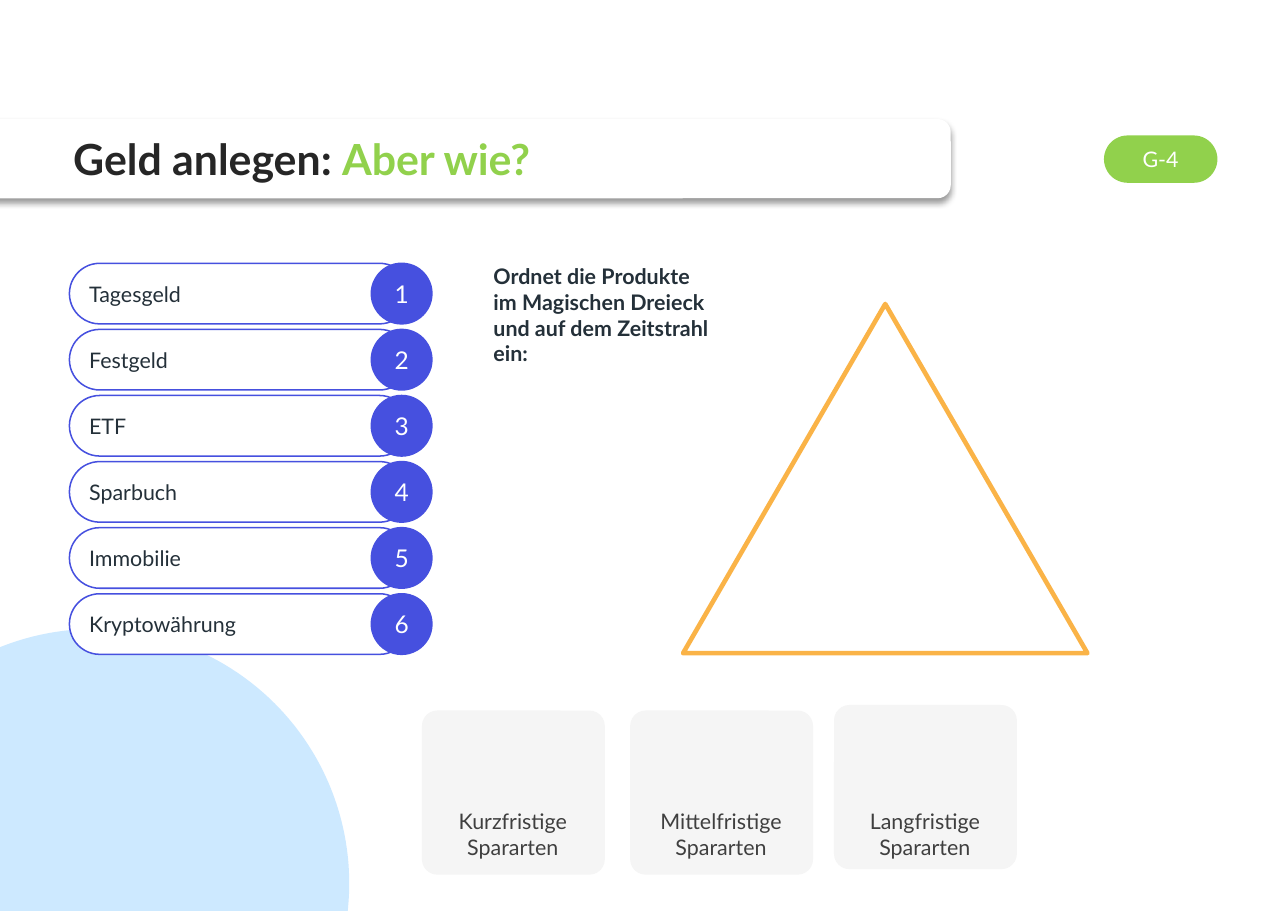
import math

import lxml.etree
import pptx
import pptx.dml.color
import pptx.enum.shapes
import pptx.enum.text
import pptx.oxml.ns
import pptx.util

Inches = pptx.util.Inches
SHAPES = pptx.enum.shapes.MSO_SHAPE
ANCHOR = pptx.enum.text.MSO_ANCHOR
ALIGN = pptx.enum.text.PP_ALIGN

COLORS = {
    "sky": "CDE9FF", "white": "FFFFFF", "title": "262626", "green": "91D14C",
    "orange": "FAB347", "blue": "4650DF", "ink": "243039",
    "card": "F5F5F5", "label": "3F3F3F", "shadow": "000000",
}

presentation = pptx.Presentation()
presentation.slide_width = Inches(11.69)
presentation.slide_height = Inches(8.27)
slide = presentation.slides.add_slide(presentation.slide_layouts[6])


def add_shape(kind, left, top, width, height, fill, line=None, points=1, corner=None):
    shape = slide.shapes.add_shape(
        kind, Inches(left), Inches(top), Inches(width), Inches(height))
    shape.shadow.inherit = False
    shape.fill.solid()
    shape.fill.fore_color.rgb = pptx.dml.color.RGBColor.from_string(COLORS[fill])
    if line:
        shape.line.color.rgb = pptx.dml.color.RGBColor.from_string(COLORS[line])
        shape.line.width = pptx.util.Pt(points)
    else:
        shape.line.fill.background()
    if corner is not None:
        shape.adjustments[0] = corner
    return shape


def write(shape, runs, size, align=ALIGN.LEFT, bold=False, anchor=ANCHOR.MIDDLE):
    frame = shape.text_frame
    frame.word_wrap = True
    frame.vertical_anchor = anchor
    paragraph = frame.paragraphs[0]
    paragraph.alignment = align
    for text, color in runs:
        run = paragraph.add_run()
        run.text = text
        run.font.name = "Lato"
        run.font.size = pptx.util.Pt(size)
        run.font.bold = bold
        run.font.color.rgb = pptx.dml.color.RGBColor.from_string(COLORS[color])


# Corner disc, cut off by the slide edges
center_x, center_y, radius = 0.86, 8.02, 2.31
start = math.acos(-center_x / radius)
end = -math.asin((8.27 - center_y) / radius)
steps = 120
angles = [start + (end - start) * step / steps for step in range(steps + 1)]
arc = [(Inches(center_x + radius * math.cos(angle)),
        Inches(center_y - radius * math.sin(angle))) for angle in angles]
builder = slide.shapes.build_freeform(0, Inches(8.27))
builder.add_line_segments(arc, close=True)
disc = builder.convert_to_shape()
disc.shadow.inherit = False
disc.fill.solid()
disc.fill.fore_color.rgb = pptx.dml.color.RGBColor.from_string(COLORS["sky"])
disc.line.fill.background()

# Title bar with a soft shadow below
title = add_shape(SHAPES.ROUNDED_RECTANGLE, -0.83, 1.08, 9.46, 0.72, "white", corner=0.167)
title.text_frame.margin_left = Inches(1.46)
write(title, [("Geld anlegen: ", "title"), ("Aber wie?", "green")], 28, bold=True)
qn = pptx.oxml.ns.qn
effects = title.element.spPr.find(qn("a:effectLst"))
shadow = lxml.etree.SubElement(
    effects, qn("a:outerShdw"), blurRad=str(pptx.util.Pt(4)),
    dist=str(pptx.util.Pt(3)), dir="5400000", algn="t", rotWithShape="0")
shadow_color = lxml.etree.SubElement(shadow, qn("a:srgbClr"), val=COLORS["shadow"])
lxml.etree.SubElement(shadow_color, qn("a:alpha"), val="40000")

# Page tag
tag = add_shape(SHAPES.ROUNDED_RECTANGLE, 10.02, 1.23, 1.03, 0.43, "green", corner=0.5)
write(tag, [("G-4", "white")], 14, ALIGN.CENTER)

# Magic triangle
add_shape(SHAPES.ISOSCELES_TRIANGLE, 6.2, 2.76, 3.67, 3.17, "white", "orange", 3)

# Numbered products
products = ["Tagesgeld", "Festgeld", "ETF", "Sparbuch", "Immobilie", "Kryptowährung"]
for index, product in enumerate(products):
    top = 2.39 + 0.6 * index
    pill = add_shape(SHAPES.ROUNDED_RECTANGLE, 0.63, top, 3.09, 0.55,
                     "white", "blue", corner=0.5)
    write(pill, [(product, "ink")], 14)
    number = add_shape(SHAPES.OVAL, 3.37, top, 0.55, 0.55, "blue", "blue")
    write(number, [(str(index + 1), "white")], 16, ALIGN.CENTER)

# Task
task = slide.shapes.add_textbox(Inches(4.38), Inches(2.34), Inches(2.22), Inches(1.04))
write(task, [("Ordnet die Produkte im Magischen Dreieck und auf dem Zeitstrahl ein:", "ink")],
      14, bold=True, anchor=ANCHOR.TOP)

# Time horizon cards
cards = [
    (3.83, 6.45, "Kurzfristige Spararten"),
    (5.72, 6.45, "Mittelfristige Spararten"),
    (7.57, 6.4, "Langfristige Spararten"),
]
for left, top, text in cards:
    add_shape(SHAPES.ROUNDED_RECTANGLE, left, top, 1.66, 1.49, "card", corner=0.094)
    label = slide.shapes.add_textbox(
        Inches(left + 0.06), Inches(7.29), Inches(1.53), Inches(0.57))
    write(label, [(text, "label")], 14, ALIGN.CENTER, anchor=ANCHOR.TOP)

presentation.save("out.pptx")
